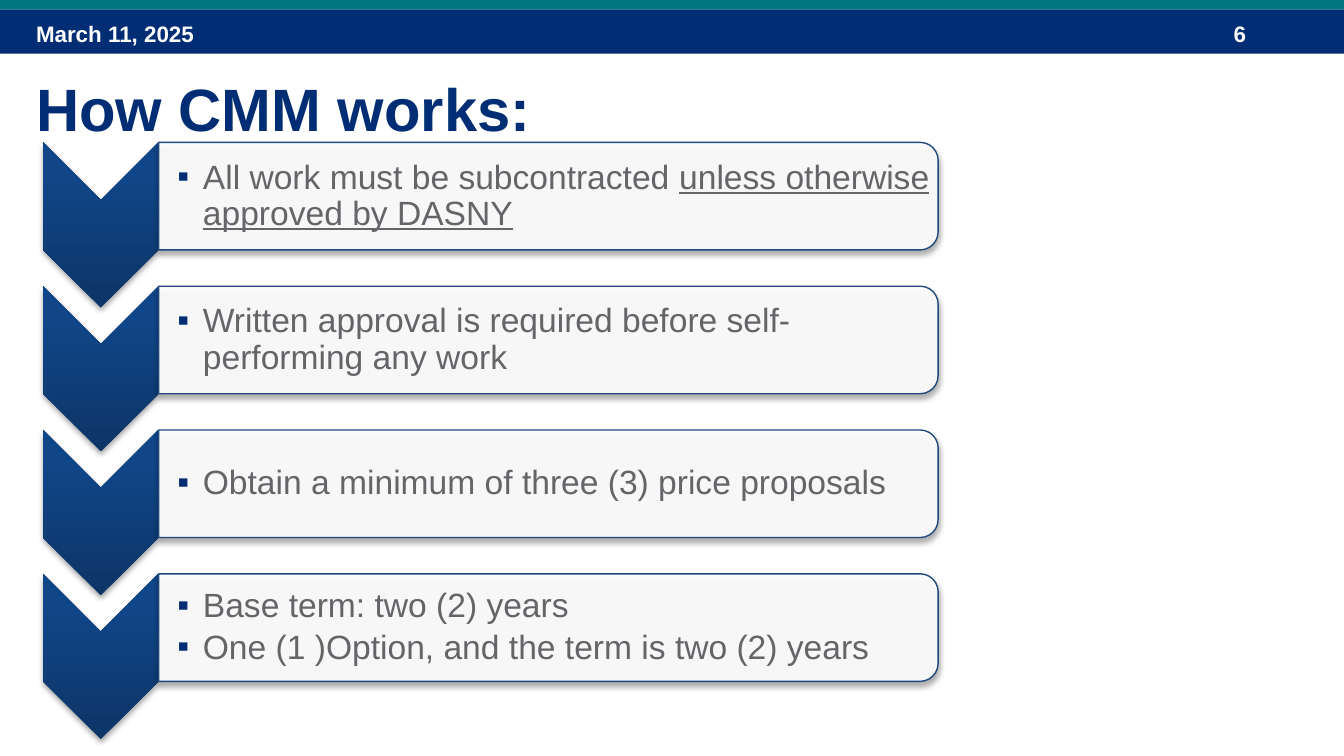
from dataclasses import dataclass

from pptx import Presentation
from pptx.dml.color import RGBColor
from pptx.enum.shapes import MSO_SHAPE
from pptx.enum.text import MSO_ANCHOR
from pptx.oxml import parse_xml
from pptx.oxml.ns import nsdecls, qn
from pptx.util import Inches, Pt


@dataclass(frozen=True)
class Theme:
    font: str = "Arial"
    navy: str = "002D73"
    teal: str = "007681"
    white: str = "FFFFFF"
    gray: str = "646569"
    edge: str = "1F497D"
    grad: tuple = ((0, "0D3568"), (80, "104587"), (100, "0E458A"))
    small: int = 12
    body: int = 18
    head: int = 32


THEME = Theme()

# Each step lists its bullets; each bullet is (plain text, underlined text).
STEPS = [
    [("All work must be subcontracted ", "unless otherwise approved by DASNY")],
    [("Written approval is required before self-performing any work", "")],
    [("Obtain a minimum of three (3) price proposals", "")],
    [("Base term: two (2) years", ""),
     ("One (1 )Option, and the term is two (2) years", "")],
]


def color(code):
    return RGBColor.from_string(code)


def style(run, size, code, bold=False):
    font = run.font
    font.name, font.size, font.bold = THEME.font, Pt(size), bold
    font.color.rgb = color(code)


def add_band(slide, top, height, code):
    band = slide.shapes.add_shape(
        MSO_SHAPE.RECTANGLE, 0, Inches(top), Inches(10), Inches(height))
    band.shadow.inherit = False
    band.fill.solid()
    band.fill.fore_color.rgb = color(code)
    band.line.fill.background()


def add_label(slide, box, text, size, code):
    label = slide.shapes.add_textbox(*map(Inches, box))
    frame = label.text_frame
    frame.word_wrap = True
    frame.text = text
    style(frame.paragraphs[0].runs[0], size, code, bold=True)
    return frame


def add_header(slide):
    add_band(slide, 0.07, 0.33, THEME.navy)
    add_label(slide, (9.08, 0.1, 0.75, 0.3), "6", THEME.small, THEME.white)
    add_band(slide, -0.02, 0.09, THEME.teal)
    add_label(slide, (0.17, 0.1, 2.33, 0.3), "March 11, 2025",
              THEME.small, THEME.white)


def add_title(slide, box):
    frame = add_label(slide, box, "How CMM works:", THEME.head, THEME.navy)
    frame.vertical_anchor = MSO_ANCHOR.MIDDLE


def add_turned(slide, kind, left, top, width, height):
    """Add a shape turned by 90 degrees that covers the given box."""
    x, y = left + (width - height) / 2, top + (height - width) / 2
    shape = slide.shapes.add_shape(
        kind, Inches(x), Inches(y), Inches(height), Inches(width))
    shape.rotation = 90
    return shape


def add_shadow(shape):
    shape._element.spPr.append(parse_xml(
        f'<a:effectLst {nsdecls("a")}><a:outerShdw blurRad="{Pt(3.1)}" '
        f'dist="{Pt(1.8)}" dir="5400000" rotWithShape="0">'
        '<a:srgbClr val="000000"><a:alpha val="35000"/></a:srgbClr>'
        '</a:outerShdw></a:effectLst>'))


def add_arrow(slide, left, top, width, height):
    arrow = add_turned(slide, MSO_SHAPE.CHEVRON, left, top, width, height)
    stops = "".join(
        f'<a:gs pos="{pos * 1000}"><a:srgbClr val="{code}"/></a:gs>'
        for pos, code in THEME.grad)
    geom = arrow._element.spPr.find(qn("a:prstGeom"))
    geom.addnext(parse_xml(
        f'<a:gradFill {nsdecls("a")} rotWithShape="0"><a:gsLst>{stops}</a:gsLst>'
        '<a:lin ang="16200000" scaled="0"/></a:gradFill>'))
    arrow.line.fill.background()
    add_shadow(arrow)


def add_card(slide, left, top, width, height):
    card = add_turned(slide, MSO_SHAPE.ROUND_2_SAME_RECTANGLE,
                      left, top, width, height)
    card.fill.solid()
    card.fill.fore_color.rgb = color(THEME.white)
    tint = card._element.spPr.find(qn("a:solidFill"))[0]
    tint.append(parse_xml(f'<a:alpha {nsdecls("a")} val="90000"/>'))
    card.line.color.rgb = color(THEME.edge)
    card.line.width = Pt(0.75)
    add_shadow(card)


def set_bullet(para):
    props = para._p.get_or_add_pPr()
    props.set("marL", str(Inches(0.19)))
    props.set("indent", str(-Inches(0.19)))
    for xml in (
        f'<a:lnSpc {nsdecls("a")}><a:spcPct val="90000"/></a:lnSpc>',
        f'<a:spcAft {nsdecls("a")}><a:spcPct val="15000"/></a:spcAft>',
        f'<a:buClr {nsdecls("a")}><a:srgbClr val="{THEME.navy}"/></a:buClr>',
        f'<a:buFont {nsdecls("a")} typeface="{THEME.font}"/>',
        f'<a:buChar {nsdecls("a")} char="▪"/>',
    ):
        props.append(parse_xml(xml))


def add_points(slide, box, points):
    frame = slide.shapes.add_textbox(*map(Inches, box)).text_frame
    frame.word_wrap = True
    frame.vertical_anchor = MSO_ANCHOR.MIDDLE
    frame.margin_left = Inches(0.14)
    frame.margin_top = frame.margin_right = frame.margin_bottom = Inches(0.01)
    for i, (plain, marked) in enumerate(points):
        para = frame.add_paragraph() if i else frame.paragraphs[0]
        para.level = 1
        set_bullet(para)
        para.text = plain
        if marked:
            run = para.add_run()
            run.text = marked
            run.font.underline = True
        for run in para.runs:
            style(run, THEME.body, THEME.gray)


def add_step(slide, left, top, points):
    add_arrow(slide, left, top, 0.86, 1.23)
    add_card(slide, left + 0.86, top, 5.8, 0.8)
    add_points(slide, (left + 0.86, top + 0.04, 5.76, 0.72), points)


def add_steps(slide, left, top, pitch):
    for i, points in enumerate(STEPS):
        add_step(slide, left, top + i * pitch, points)


def main():
    deck = Presentation()
    deck.slide_width = Inches(10)
    deck.slide_height = deck.slide_width * 9 // 16
    slide = deck.slides.add_slide(deck.slide_layouts[6])
    add_header(slide)
    add_title(slide, (0.17, 0.48, 9.5, 0.64))
    add_steps(slide, 0.32, 1.06, 1.07)
    deck.save("out.pptx")


if __name__ == "__main__":
    main()
